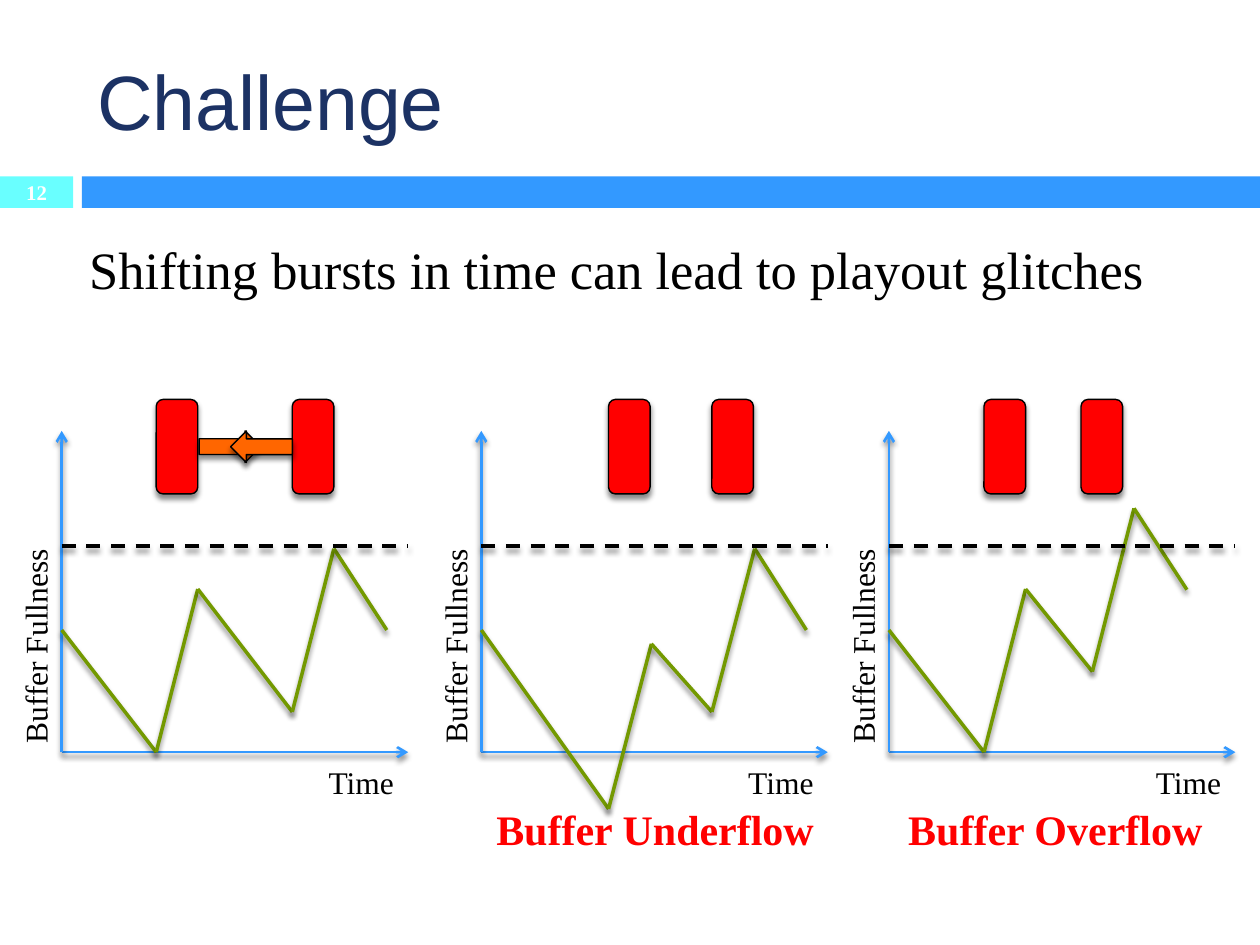
import itertools

import lxml.etree
import pptx
import pptx.dml.color
import pptx.enum.dml
import pptx.enum.shapes
import pptx.enum.text
import pptx.oxml
import pptx.oxml.ns
import pptx.util

COLORS = {
    "axis": "3399FF", "badge": "69FFFF", "title": "1C3264", "text": "000000",
    "curve": "739900", "burst": "FF0000", "shift": "FF6600", "white": "FFFFFF",
}
COLUMNS, ROWS = 100, 75
SLIDE_WIDTH, SLIDE_HEIGHT = pptx.util.Inches(10), pptx.util.Inches(7.5)
AXIS_TOP, AXIS_WIDTH, AXIS_HEIGHT = 34.2, 27.5, 25.5
BURST_TOP, BURST_WIDTH, BURST_HEIGHT = -2.5, 3.3, 7.5
LIMIT = 9.15
SHAPES = pptx.enum.shapes.MSO_SHAPE
GRAPHS = [
    {"left": 4.9, "bursts": (7.5, 18.3), "caption": None,
     "curve": [(0, 15.8), (7.5, 25.5), (10.8, 12.55), (18.3, 22.3), (21.6, 9.35), (25.8, 15.8)]},
    {"left": 38.2, "bursts": (10.1, 18.3), "caption": ("Buffer Underflow", 0.2, 27.5),
     "curve": [(0, 15.8), (10.1, 30), (13.5, 16.9), (18.3, 22.3), (21.7, 9.35), (25.8, 15.8)]},
    {"left": 70.55, "bursts": (7.55, 15.25), "caption": ("Buffer Overflow", 0.55, 25.6),
     "curve": [(0, 15.8), (7.55, 25.5), (10.85, 12.55), (16.15, 19.1), (19.45, 6.15), (23.65, 12.6)]},
]


def grid(*lengths):
    """Turn alternating columns and rows into slide lengths."""
    units = itertools.cycle((SLIDE_WIDTH / COLUMNS, SLIDE_HEIGHT / ROWS))
    return [pptx.util.Emu(round(length * unit)) for length, unit in zip(lengths, units)]


def color(name):
    """Return the named colour."""
    return pptx.dml.color.RGBColor.from_string(COLORS[name])


def set_shadow(shape):
    """Give a shape or connector a soft shadow straight below it."""
    namespace = pptx.oxml.ns.nsdecls("a")
    shape._element.spPr.append(pptx.oxml.parse_xml(
        f'<a:effectLst {namespace}><a:outerShdw blurRad="38100" dist="30480" dir="5400000" '
        'rotWithShape="0"><a:srgbClr val="000000"><a:alpha val="45000"/></a:srgbClr>'
        '</a:outerShdw></a:effectLst>'))


def write(shape, text, size=18, font="Times New Roman", ink="text", bold=False,
          align="LEFT", anchor="TOP", wrap=True):
    """Write formatted text into a shape and return its paragraph."""
    frame = shape.text_frame
    frame.word_wrap = wrap
    frame.auto_size = pptx.enum.text.MSO_AUTO_SIZE.NONE
    frame.vertical_anchor = getattr(pptx.enum.text.MSO_ANCHOR, anchor)
    paragraph = frame.paragraphs[0]
    paragraph.alignment = getattr(pptx.enum.text.PP_ALIGN, align)
    run = paragraph.add_run()
    run.text = text
    run.font.size = pptx.util.Pt(size)
    run.font.name = font
    run.font.bold = bold
    run.font.color.rgb = color(ink)
    return paragraph


def add_label(shapes, text, box, **text_format):
    """Add a text box and return it."""
    label = shapes.add_textbox(*grid(*box))
    write(label, text, **text_format)
    return label


def add_block(shapes, kind, box, fill, outlined=True):
    """Add a filled shape, with an outline and shadow if wanted."""
    block = shapes.add_shape(kind, *grid(*box))
    block.shadow.inherit = not outlined and False
    block.fill.solid()
    block.fill.fore_color.rgb = color(fill)
    if outlined:
        block.line.color.rgb = color("text")
        block.line.width = pptx.util.Pt(0.79)
        block._element.spPr.remove(block._element.spPr.find(pptx.oxml.ns.qn("a:effectLst")))
        set_shadow(block)
    else:
        block.line.fill.background()
    return block


def add_line(shapes, start, end, ink, width=2, dashed=False, arrow=False):
    """Add a straight shadowed line between two grid points."""
    line = shapes.add_connector(pptx.enum.shapes.MSO_CONNECTOR.STRAIGHT, *grid(*start, *end))
    line.line.color.rgb = color(ink)
    line.line.width = pptx.util.Pt(width)
    if dashed:
        line.line.dash_style = pptx.enum.dml.MSO_LINE.DASH
    if arrow:
        outline = line._element.spPr.find(pptx.oxml.ns.qn("a:ln"))
        lxml.etree.SubElement(outline, pptx.oxml.ns.qn("a:tailEnd"), type="arrow")
    set_shadow(line)


def add_header(slide):
    """Place the title, the band below it and the slide number."""
    for left, width, fill in ((0, 5.8, "badge"), (6.5, 93.5, "axis")):
        add_block(slide.shapes, SHAPES.RECTANGLE, (left, 14, width, 2.5), fill, outlined=False)
    title = slide.shapes.title
    title.left, title.top, title.width, title.height = grid(6.7, 2.5, 89.2, 10.8)
    write(title, "Challenge", size=44, font="Arial", ink="title", anchor="MIDDLE")
    add_label(slide.shapes, "12", (0, 13.9, 5.8, 2.7), size=11.9, ink="white",
              bold=True, align="CENTER", anchor="MIDDLE")


def add_statement(slide, box):
    """Place the main statement with its hanging indent."""
    label = slide.shapes.add_textbox(*grid(*box))
    paragraph = write(label, "Shifting bursts in time can lead to playout glitches", size=30)
    paragraph.space_before = pptx.util.Pt(7)
    properties = paragraph._p.get_or_add_pPr()
    properties.set("marL", str(pptx.util.Inches(0.72)))
    properties.set("indent", str(pptx.util.Inches(-0.37)))


def add_graph(slide, box, curve, bursts, caption):
    """Draw one buffer graph as a group inside the box of its axes."""
    left, top, width, height = box
    shapes = slide.shapes.add_group_shape().shapes
    origin = (left, top + height)
    add_label(shapes, "Time", (left + 20.2, top + 25.9, 7.3, 4), wrap=False)
    for end in ((left + width, top + height), (left, top)):
        add_line(shapes, origin, end, "axis", width=1.5, arrow=True)
    for burst in bursts:
        add_block(shapes, SHAPES.ROUNDED_RECTANGLE,
                  (left + burst, top + BURST_TOP, BURST_WIDTH, BURST_HEIGHT), "burst")
    points = [(left + column, top + row) for column, row in curve]
    for start, end in itertools.pairwise(points):
        add_line(shapes, start, end, "curve")
    add_line(shapes, (left, top + LIMIT), (left + width, top + LIMIT), "text", dashed=True)
    label = add_label(shapes, "Buffer Fullness", (left - 10.9, top + 15, 17.6, 4))
    label.rotation = 270
    if caption:
        text, offset, caption_width = caption
        add_label(shapes, text, (left + offset, top + 29.1, caption_width, 5),
                  size=24, ink="burst", bold=True, wrap=False)


def add_shift_arrows(slide, box):
    """Place two facing arrows that overlap in the middle of the box."""
    left, top, width, height = box
    arrow_width = 4.9
    for start, rotation in ((left, 0), (left + width - arrow_width, 180)):
        arrow = add_block(slide.shapes, SHAPES.RIGHT_ARROW,
                          (start, top, arrow_width, height), "shift")
        arrow.rotation = rotation


def main():
    """Build and save the slide."""
    presentation = pptx.Presentation()
    presentation.slide_width, presentation.slide_height = SLIDE_WIDTH, SLIDE_HEIGHT
    slide = presentation.slides.add_slide(presentation.slide_layouts[5])
    add_header(slide)
    add_statement(slide, (2.6, 18.3, 91.4, 11.7))
    for graph in GRAPHS:
        box = (graph["left"], AXIS_TOP, AXIS_WIDTH, AXIS_HEIGHT)
        add_graph(slide, box, graph["curve"], graph["bursts"], graph["caption"])
    add_shift_arrows(slide, (15.8, AXIS_TOP, 7.4, 2.5))
    presentation.save("out.pptx")


if __name__ == "__main__":
    main()
